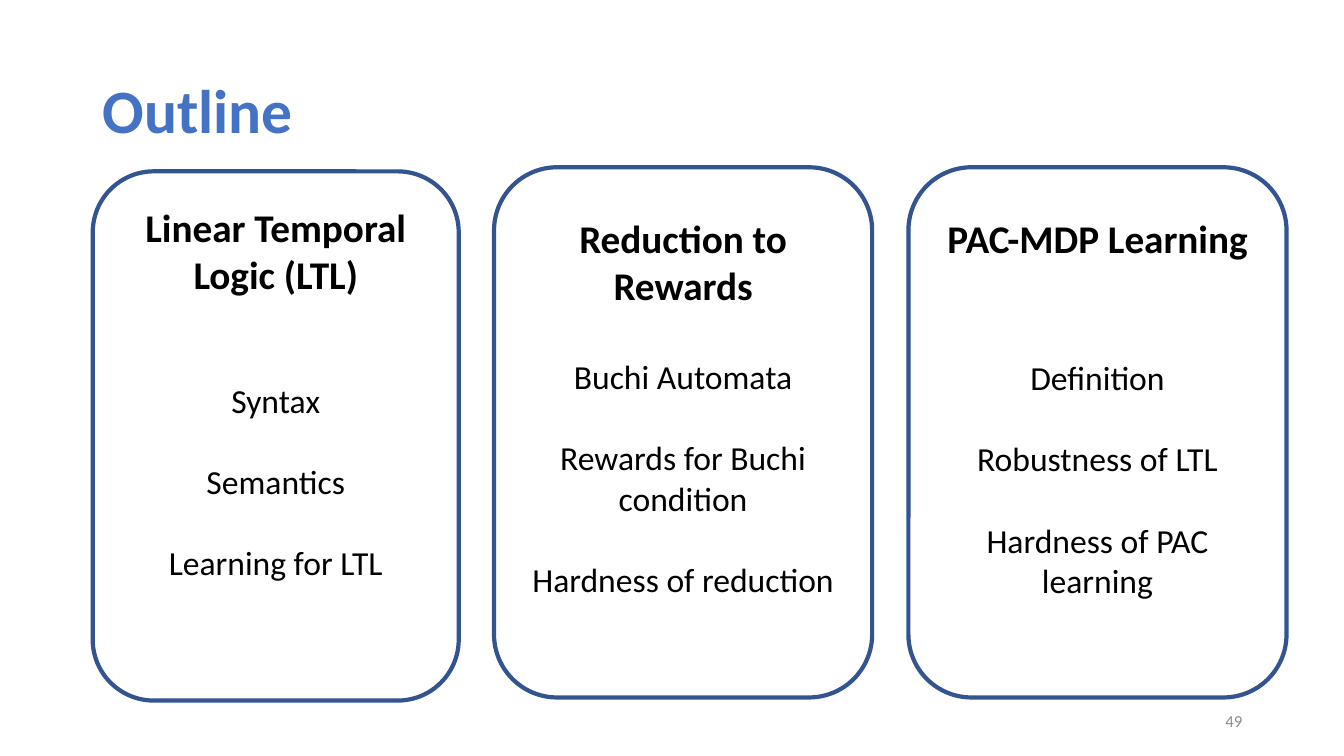
from pptx import Presentation
from pptx.dml.color import RGBColor
from pptx.enum import shapes, text
from pptx.util import Inches, Pt

# Content
TITLE = "Outline"
PAGE = "49"
# Per card: box (left, top, width, height), inset above the heading (inches),
# gap below the heading (points)
CARDS = [
    {"heading": "Linear Temporal Logic (LTL)",
     "topics": ["Syntax", "Semantics", "Learning for LTL"],
     "box": (0.92, 1.7, 3.63, 5.25), "inset": 0.14, "gap": 58.6},
    {"heading": "Reduction to Rewards",
     "topics": ["Buchi Automata", "Rewards for Buchi condition",
                "Hardness of reduction"],
     "box": (4.9, 1.66, 3.75, 5.26), "inset": 0.28, "gap": 34.2},
    {"heading": "PAC-MDP Learning",
     "topics": ["Definition", "Robustness of LTL", "Hardness of PAC learning"],
     "box": (9.01, 1.66, 3.75, 5.26), "inset": 0.28, "gap": 68.4},
]

THEME = {
    "font": "Calibri",
    "title": (44, "4472C4", True),
    "heading": (28, "000000", True),
    "topic": (24, "000000", False),
    "page": (12, "8C8C8C", False),
    "outline": "325491",
    "outline_width": 3,
    "topic_gap": 29.3,
}


def write(paragraph, words, style, align, gap=0):
    size, color, bold = THEME[style]
    paragraph.text = words
    paragraph.alignment = align
    paragraph.space_before = Pt(gap)
    font = paragraph.font
    font.name, font.size, font.bold = THEME["font"], Pt(size), bold
    font.color.rgb = RGBColor.from_string(color)


def add_label(slide, box, words, style, align):
    frame = slide.shapes.add_textbox(*map(Inches, box)).text_frame
    frame.word_wrap = True
    frame.vertical_anchor = text.MSO_ANCHOR.MIDDLE
    write(frame.paragraphs[0], words, style, align)
    return frame.paragraphs[0]


def add_card(slide, content):
    card = slide.shapes.add_shape(shapes.MSO_SHAPE.ROUNDED_RECTANGLE,
                                  *map(Inches, content["box"]))
    card.shadow.inherit = False
    card.fill.background()
    card.line.color.rgb = RGBColor.from_string(THEME["outline"])
    card.line.width = Pt(THEME["outline_width"])

    frame = card.text_frame
    frame.word_wrap = True
    frame.vertical_anchor = text.MSO_ANCHOR.TOP
    frame.margin_top = Inches(content["inset"])
    center = text.PP_ALIGN.CENTER
    write(frame.paragraphs[0], content["heading"], "heading", center)
    for i, topic in enumerate(content["topics"]):
        gap = THEME["topic_gap"] if i else content["gap"]
        write(frame.add_paragraph(), topic, "topic", center, gap)


def main():
    deck = Presentation()
    deck.slide_width, deck.slide_height = Inches(13.33), Inches(7.5)
    slide = deck.slides.add_slide(deck.slide_layouts[6])

    # Title and page number
    title = add_label(slide, (0.92, 0.4, 11.5, 1.45), TITLE, "title",
                      text.PP_ALIGN.LEFT)
    title.line_spacing = 0.9
    add_label(slide, (9.42, 6.95, 3, 0.4), PAGE, "page", text.PP_ALIGN.RIGHT)

    # Outline cards
    for content in CARDS:
        add_card(slide, content)

    deck.save("out.pptx")


if __name__ == "__main__":
    main()
